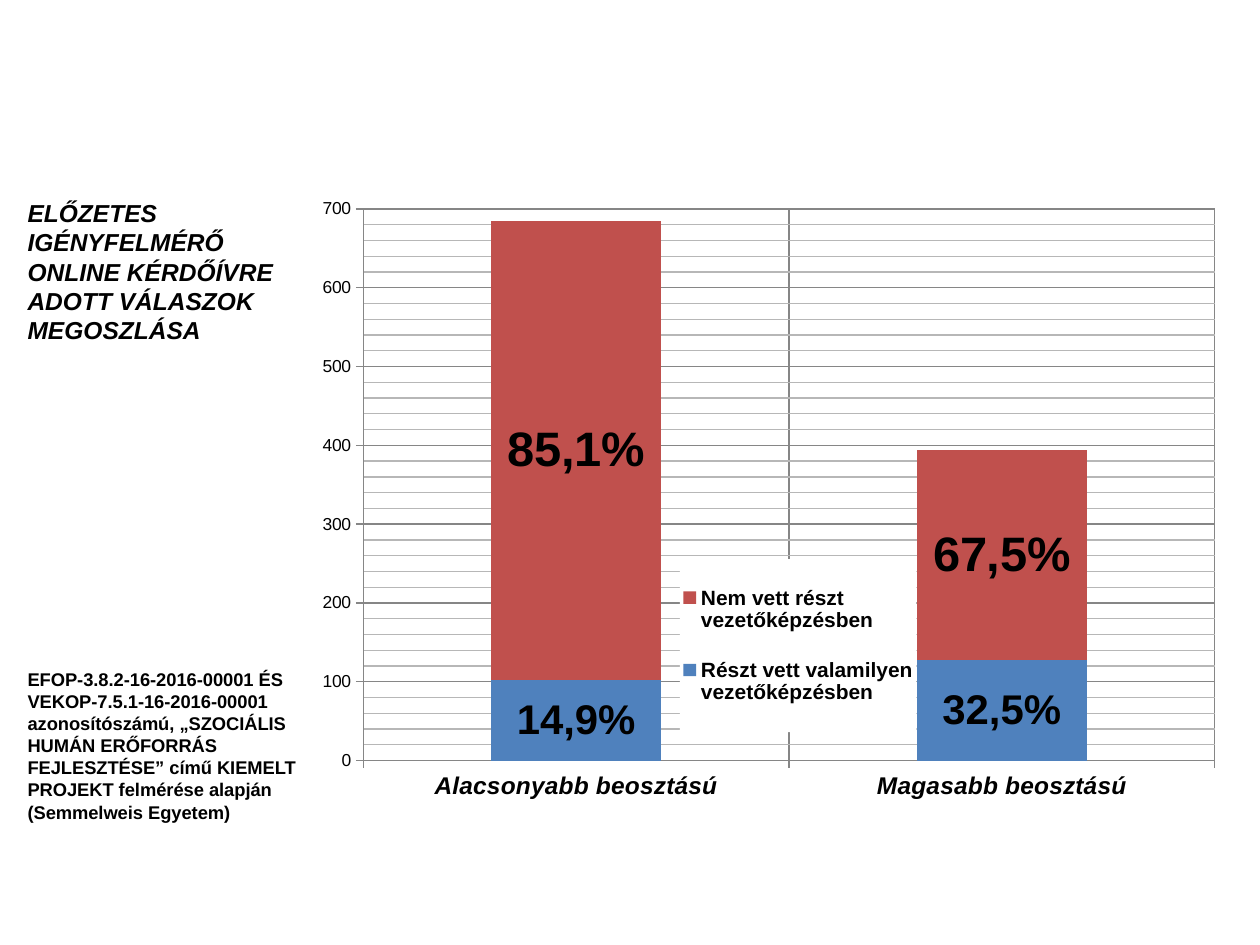
"""Build a slide with a stacked column chart of leadership training answers."""
from lxml import etree
from pptx import Presentation
from pptx.chart.data import CategoryChartData
from pptx.dml.color import RGBColor
from pptx.enum import chart as ch, text
from pptx.oxml import parse_xml
from pptx.oxml.ns import nsdecls, qn
from pptx.util import Inches, Pt

NOTES = [
    ("ELŐZETES IGÉNYFELMÉRŐ ONLINE KÉRDŐÍVRE ADOTT VÁLASZOK MEGOSZLÁSA",
     0, {"size": Pt(14), "italic": True}),
    ("EFOP-3.8.2-16-2016-00001 ÉS VEKOP-7.5.1-16-2016-00001 azonosítószámú, "
     "„SZOCIÁLIS HUMÁN ERŐFORRÁS FEJLESZTÉSE” című KIEMELT PROJEKT felmérése "
     "alapján (Semmelweis Egyetem)", 185, {"size": Pt(10.5), "italic": False}),
]
CATEGORIES = ["Alacsonyabb beosztású", "Magasabb beosztású"]
SERIES = [
    ("Részt vett valamilyen vezetőképzésben", (102, 128), ("14,9%", "32,5%"), "4F81BD", 24),
    ("Nem vett részt vezetőképzésben", (583, 266), ("85,1%", "67,5%"), "C0504D", 28),
]
PLOT_BOX = (0.042, 0.023, 0.936, 0.925)
LEGEND_BOX = (0.39, 0.61, 0.26, 0.29)
MAJOR, MINOR = "868686", "B7B7B7"


def rgb(value):
    """Return a colour from a hex string."""
    return RGBColor.from_string(value)


def style(font, **values):
    """Apply the slide font and the given format values."""
    for key, value in {"name": "Arial", **values}.items():
        setattr(font, key, value)
    font.color.rgb = rgb("000000")


def rule(line, color):
    """Draw a thin line in the given colour."""
    line.color.rgb = rgb(color)
    line.width = Pt(0.75)


def shape_props(content):
    """Return chart shape properties holding the given drawing XML."""
    return parse_xml(f"<c:spPr {nsdecls('c', 'a')}>{content}</c:spPr>")


def solid(color):
    """Return the XML of a solid fill."""
    return f'<a:solidFill><a:srgbClr val="{color}"/></a:solidFill>'


def set_layout(parent, index, box, inner=False):
    """Place a chart part at fractions of the chart area."""
    for old in parent.findall(qn("c:layout")):
        parent.remove(old)
    layout = parse_xml(f"<c:layout {nsdecls('c')}><c:manualLayout/></c:layout>")
    values = [("layoutTarget", "inner")] if inner else []
    values += [("xMode", "edge"), ("yMode", "edge"), *zip("xywh", box)]
    for tag, value in values:
        etree.SubElement(layout[0], qn(f"c:{tag}")).set("val", str(value))
    parent.insert(index, layout)


def add_notes(s):
    """Add the heading and the source note at the left."""
    tf = s.shapes.add_textbox(Inches(0.12), Inches(1.52), Inches(2.42), Inches(4.34)).text_frame
    tf.word_wrap = True
    tf.vertical_anchor = text.MSO_ANCHOR.TOP
    for i, (words, gap, fmt) in enumerate(NOTES):
        p = tf.add_paragraph() if i else tf.paragraphs[0]
        p.space_before = Pt(gap)
        r = p.add_run()
        r.text = words
        style(r.font, bold=True, **fmt)


def format_axes(chart):
    """Set scales, gridlines and tick labels."""
    cat, val = chart.category_axis, chart.value_axis
    for key, value in {"minimum_scale": 0, "maximum_scale": 700, "major_unit": 100,
                       "minor_unit": 20, "has_minor_gridlines": True}.items():
        setattr(val, key, value)
    for axis in (cat, val):
        axis.has_major_gridlines = True
        axis.major_tick_mark = ch.XL_TICK_MARK.OUTSIDE
        axis.minor_tick_mark = ch.XL_TICK_MARK.NONE
        rule(axis.major_gridlines.format.line, MAJOR)
        rule(axis.format.line, MAJOR)
    minor = chart._chartSpace.find(f".//{qn('c:minorGridlines')}")
    minor.append(shape_props(f'<a:ln w="{Pt(0.75)}">{solid(MINOR)}</a:ln>'))
    style(cat.tick_labels.font, size=Pt(14), bold=True, italic=True)
    style(val.tick_labels.font, size=Pt(10), bold=False)


def format_series(plot):
    """Colour the columns and write their percentages."""
    plot.gap_width, plot.overlap, plot.vary_by_categories = 150, 100, False
    for series, (_, _, labels, color, size) in zip(plot.series, SERIES):
        series.format.fill.solid()
        series.format.fill.fore_color.rgb = rgb(color)
        series.data_labels.show_value = True
        series.data_labels.position = ch.XL_LABEL_POSITION.CENTER
        style(series.data_labels.font, size=Pt(size), bold=True)
        for i, label in enumerate(labels):
            data_label = series.points[i].data_label
            r = data_label.text_frame.paragraphs[0].add_run()
            r.text = label
            style(r.font, size=Pt(size), bold=True)
            data_label.position = ch.XL_LABEL_POSITION.CENTER


def format_legend(chart):
    """Set the legend on a white ground between the columns."""
    chart.has_legend = True
    legend = chart.legend
    legend.position = ch.XL_LEGEND_POSITION.RIGHT
    legend.include_in_layout = False
    style(legend.font, size=Pt(12), bold=True)
    node = legend._element
    set_layout(node, 1, LEGEND_BOX)
    node.find(qn("c:txPr")).addprevious(shape_props(solid("FFFFFF")))


def add_chart(s):
    """Add the stacked column chart."""
    data = CategoryChartData()
    data.categories = CATEGORIES
    for name, values, *_ in SERIES:
        data.add_series(name, values)
    chart = s.shapes.add_chart(ch.XL_CHART_TYPE.COLUMN_STACKED, Inches(2.56), Inches(1.55),
                               Inches(7.24), Inches(4.8), data).chart
    chart.has_title = False
    style(chart.font, size=Pt(10))
    format_axes(chart)
    format_series(chart.plots[0])
    format_legend(chart)
    set_layout(chart._chartSpace.chart.plotArea, 0, PLOT_BOX, inner=True)


def main():
    """Build and save the slide."""
    prs = Presentation()
    prs.slide_width, prs.slide_height = Inches(10), Inches(7.5)
    s = prs.slides.add_slide(prs.slide_layouts[6])
    add_notes(s)
    add_chart(s)
    prs.save("out.pptx")


if __name__ == "__main__":
    main()
